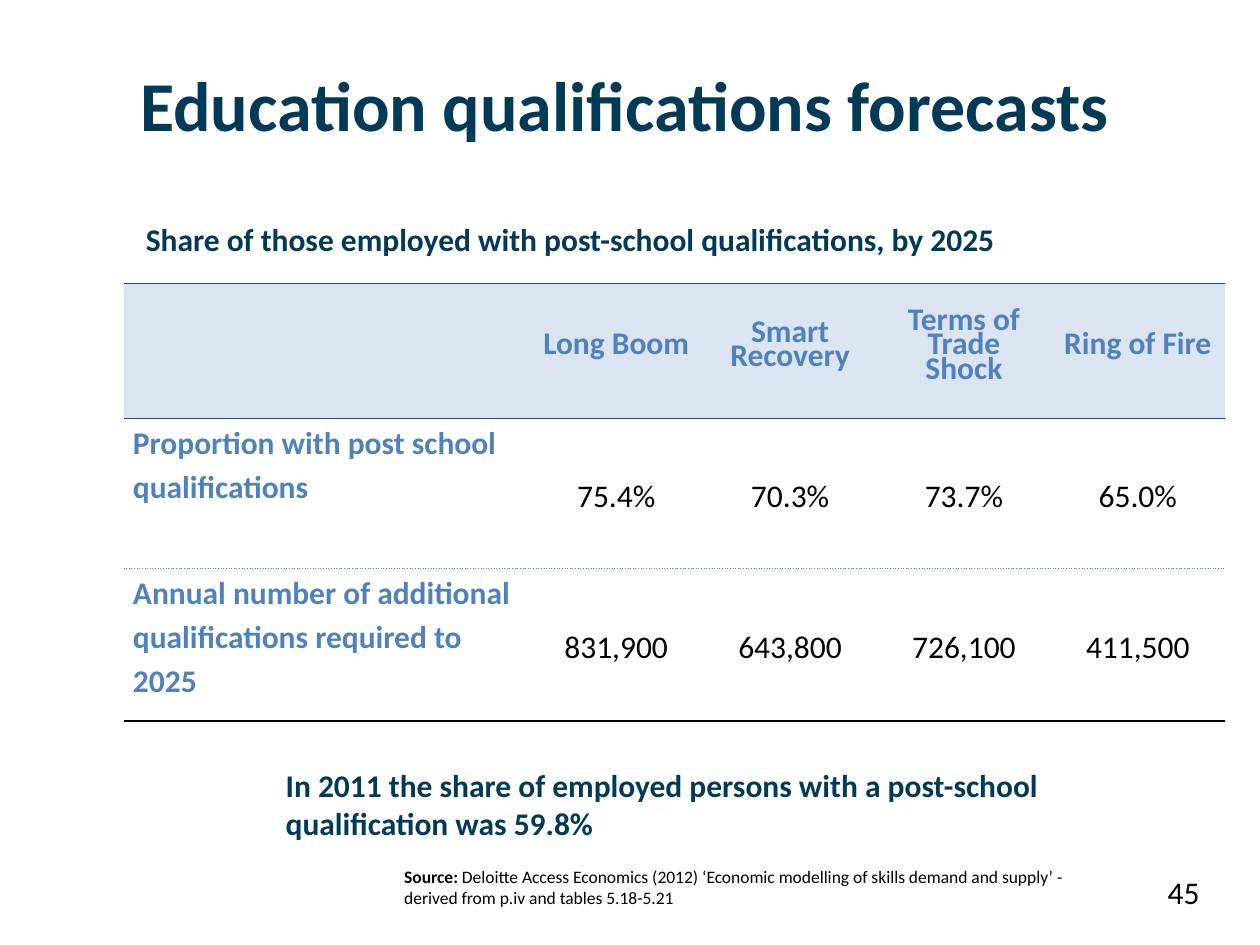
from collections import namedtuple
from dataclasses import dataclass

from lxml.etree import SubElement
from pptx import Presentation
from pptx.dml.color import RGBColor as Rgb
from pptx.enum.text import MSO_ANCHOR as Anchor, PP_ALIGN as Align
from pptx.oxml.ns import qn
from pptx.util import Cm, Pt

Box = namedtuple("Box", "left top width height")


@dataclass(frozen=True)
class Theme:
    font: str = "Calibri"
    navy: str = "003A57"
    blue: str = "4F81BD"
    rule: str = "1F497D"
    pale: str = "DBE5F1"
    black: str = "000000"
    title: int = 40
    body: int = 18
    note: int = 10


THEME = Theme()

HEADS = ["", "Long Boom", "Smart Recovery", "Terms of Trade Shock", "Ring of Fire"]
ROWS = [
    ["Proportion with post school qualifications",
     "75.4%", "70.3%", "73.7%", "65.0%"],
    ["Annual number of additional qualifications required to 2025",
     "831,900", "643,800", "726,100", "411,500"],
]


def write(frame, text, size=THEME.body, color=THEME.black, bold=False,
          align=Align.LEFT, space=None, lead=""):
    para = frame.paragraphs[0]
    para.alignment = align
    para.line_spacing = space
    for part, heavy in ((lead, True), (text, bold)):
        if part:
            run = para.add_run()
            run.text = part
            font = run.font
            font.name, font.size, font.bold = THEME.font, Pt(size), heavy
            font.color.rgb = Rgb.from_string(color)


def add_text(slide, box, text, wrap=True, anchor=Anchor.TOP, **style):
    frame = slide.shapes.add_textbox(*map(Cm, box)).text_frame
    frame.word_wrap = wrap
    frame.vertical_anchor = anchor
    write(frame, text, **style)


def add_edges(cell, top, base):
    props = cell._tc.get_or_add_tcPr()
    edges = {"a:lnL": None, "a:lnR": None, "a:lnT": top, "a:lnB": base}
    for spot, (tag, edge) in enumerate(edges.items()):
        line = SubElement(props, qn(tag), w=str(Pt(1)))
        props.insert(spot, line)
        if edge is None:
            SubElement(line, qn("a:noFill"))
            continue
        color, dash = edge
        fill = SubElement(line, qn("a:solidFill"))
        SubElement(fill, qn("a:srgbClr"), val=color)
        SubElement(line, qn("a:prstDash"), val=dash)


def add_grid(slide, box):
    data = [HEADS] + ROWS
    table = slide.shapes.add_table(len(data), len(HEADS), *map(Cm, box)).table
    table.first_row = table.horz_banding = False
    label = 8.18
    share = (box.width - label) / (len(HEADS) - 1)
    for col, width in zip(table.columns, [label] + [share] * (len(HEADS) - 1)):
        col.width = Cm(width)
    for row, height in zip(table.rows, (2.72, 3.02, 3.07)):
        row.height = Cm(height)

    solid = (THEME.rule, "solid")
    rules = [solid, solid, (THEME.blue, "dot"), (THEME.black, "solid")]
    for r, texts in enumerate(data):
        for c, text in enumerate(texts):
            cell = table.cell(r, c)
            head, side = r == 0, c == 0
            cell.margin_left = cell.margin_right = Cm(0.19)
            cell.margin_top = cell.margin_bottom = 0
            cell.vertical_anchor = Anchor.TOP if side else Anchor.MIDDLE
            if head:
                cell.fill.solid()
                cell.fill.fore_color.rgb = Rgb.from_string(THEME.pale)
            else:
                cell.fill.background()
            add_edges(cell, rules[r], rules[r + 1])
            write(cell.text_frame, text, bold=head or side,
                  color=THEME.blue if head or side else THEME.black,
                  align=Align.LEFT if side else Align.CENTER,
                  space=Pt(13.8) if head else 1.15)


def add_header(slide, box):
    add_text(slide, Box(box.left, box.top, box.width, 1.96),
             "Education qualifications forecasts", wrap=False,
             size=THEME.title, color=THEME.navy, bold=True, align=Align.CENTER)
    add_text(slide, Box(box.left + 0.25, box.top + 3.2, 20.8, 1.02),
             "Share of those employed with post-school qualifications, by 2025",
             color=THEME.navy, bold=True)


def add_footer(slide, box):
    add_text(slide, Box(box.left, box.top, 16, 1.8),
             "In 2011 the share of employed persons with a post-school "
             "qualification was 59.8%", color=THEME.navy, bold=True)
    add_text(slide, Box(box.left + 2.39, box.top + 2.01, 14.2, 1.12),
             "Deloitte Access Economics (2012) ‘Economic modelling of skills "
             "demand and supply’ - derived from p.iv and tables 5.18-5.21",
             lead="Source: ", size=THEME.note, anchor=Anchor.MIDDLE)
    add_text(slide, Box(box.left + box.width - 2.11, box.top + 2.16, 2.11, 1.57),
             "45")


def main():
    deck = Presentation()
    deck.slide_width, deck.slide_height = Cm(25.4), Cm(19.05)
    slide = deck.slides.add_slide(deck.slide_layouts[6])
    add_header(slide, Box(2.44, 1.12, 20.3, 4.22))
    add_grid(slide, Box(2.49, 5.72, 22.2, 8.81))
    add_footer(slide, Box(5.51, 15.32, 19.89, 3.73))
    deck.save("out.pptx")


if __name__ == "__main__":
    main()
